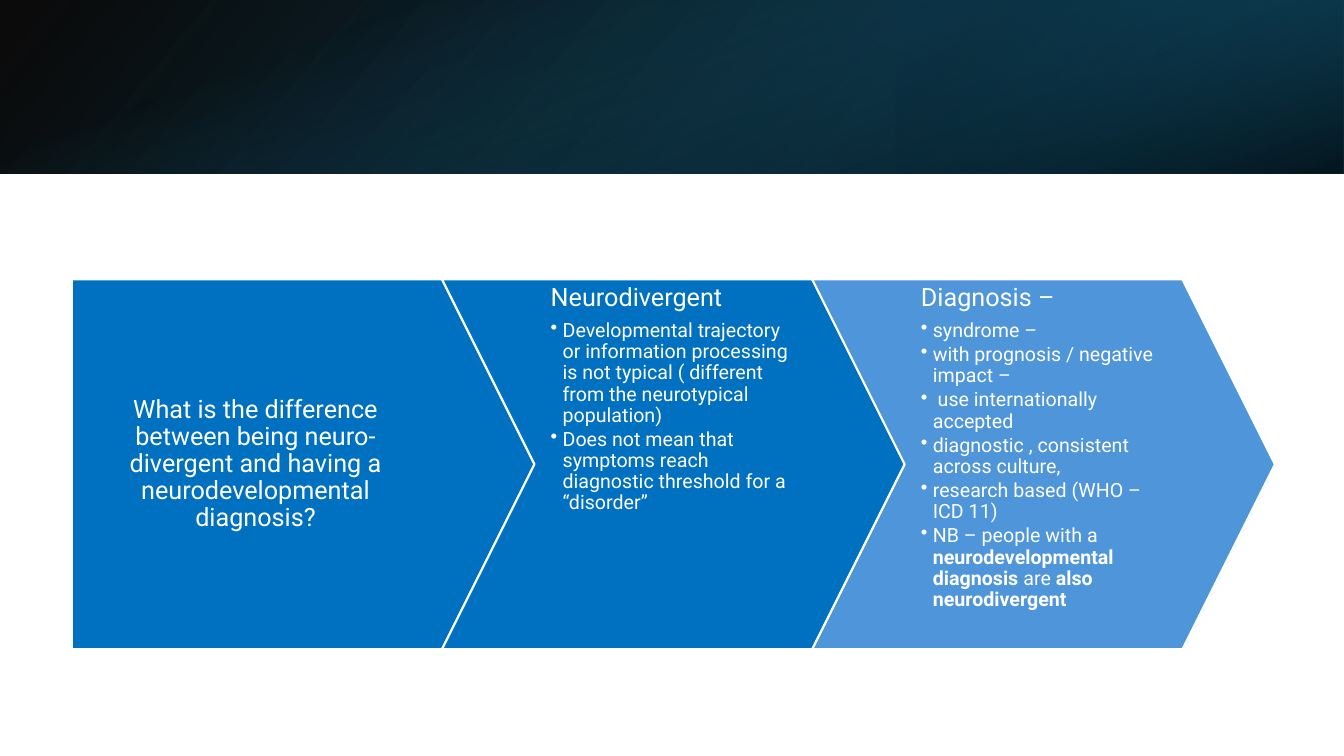
from dataclasses import dataclass

from lxml import etree
from pptx import Presentation
from pptx import util as u
from pptx.dml import color
from pptx.enum import shapes, text
from pptx.oxml import ns

SLIDE_W, SLIDE_H, BANNER_H = 33.87, 19.05, 4.37
STEP_LEFT, STEP_TOP, STEP_W, STEP_H = 1.81, 7.04, 11.66, 9.32
STEP_PITCH, POINT_DEPTH = 9.33, 2.33
SIDE_INSET, EDGE_INSET, BULLET_INDENT = 0.41, 0.13, 0.3
FONT, WHITE = "Roboto", "FFFFFF"


@dataclass
class Stop:
    position: float
    hex_color: str
    opacity: int


@dataclass
class Glow:
    left: float
    top: float
    width: float
    height: float
    rotation: int
    flipped: bool
    angle: int
    stops: tuple[Stop, Stop]


@dataclass
class Step:
    heading: str
    bullets: tuple[str, ...]
    fill: str
    preset: shapes.MSO_SHAPE = shapes.MSO_SHAPE.CHEVRON
    text_offset: float = POINT_DEPTH
    text_width: float = 7
    right_inset: float = SIDE_INSET
    anchor: text.MSO_ANCHOR = text.MSO_ANCHOR.TOP
    align: text.PP_ALIGN = text.PP_ALIGN.LEFT


GLOWS = (
    Glow(0, 0, SLIDE_W, BANNER_H, 0, True, 140,
         (Stop(0, "000000", 96), Stop(1, "104862", 100))),
    Glow(22.58, 0, 11.29, BANNER_H, 180, True, 320,
         (Stop(0.19, "0B3041", 68), Stop(1, "156082", 79))),
    Glow((SLIDE_W - BANNER_H) / 2, (BANNER_H - SLIDE_W) / 2, BANNER_H, SLIDE_W, 90, False, 340,
         (Stop(0.23, "156082", 0), Stop(0.99, "000000", 74))),
)

STEPS = (
    Step("What is the difference between being neuro-divergent and having a "
         "neurodevelopmental diagnosis?", (), "0070C0", shapes.MSO_SHAPE.PENTAGON,
         0, 10.5, 1.65, text.MSO_ANCHOR.MIDDLE, text.PP_ALIGN.CENTER),
    Step("Neurodivergent", (
        "Developmental trajectory or information processing is not typical "
        "( different from the neurotypical population)",
        "Does not mean that symptoms reach diagnostic threshold for a “disorder”",
    ), "0070C0"),
    Step("Diagnosis – ", (
        "syndrome –",
        "with prognosis / negative impact –",
        " use internationally accepted",
        "diagnostic , consistent across culture, ",
        "research based (WHO – ICD 11)",
        "NB – people with a *neurodevelopmental diagnosis *are *also neurodivergent*",
    ), "4E95D9"),
)


def rgb(hex_color: str) -> color.RGBColor:
    return color.RGBColor.from_string(hex_color)


def apply(target: object, values: dict[str, object]) -> None:
    for name, value in values.items():
        setattr(target, name, value)


def draw_glow(slide, glow: Glow) -> None:
    s = slide.shapes.add_shape(shapes.MSO_SHAPE.RECTANGLE, u.Cm(glow.left), u.Cm(glow.top),
                               u.Cm(glow.width), u.Cm(glow.height))
    s.shadow.inherit = False
    s.line.fill.background()
    s.rotation = glow.rotation
    if glow.flipped:
        s._element.spPr.find(ns.qn("a:xfrm")).set("flipH", "1")
    s.fill.gradient()
    s.fill.gradient_angle = 360 - glow.angle
    for gradient_stop, stop in zip(s.fill.gradient_stops, glow.stops):
        apply(gradient_stop, {"position": stop.position})
        gradient_stop.color.rgb = rgb(stop.hex_color)
    for tone, stop in zip(s._element.spPr.iter(ns.qn("a:srgbClr")), glow.stops):
        etree.SubElement(tone, ns.qn("a:alpha")).set("val", str(stop.opacity * 1000))


def write(p, content: str, size: int, space_after: float, align: text.PP_ALIGN) -> None:
    apply(p, {"line_spacing": 0.9, "space_after": u.Pt(space_after), "alignment": align})
    for i, part in enumerate(content.split("*")):
        if part:
            r = p.add_run()
            r.text = part
            apply(r.font, {"name": FONT, "size": u.Pt(size), "bold": i % 2 == 1})
            r.font.color.rgb = rgb(WHITE)


def add_bullet(p) -> None:
    indent = u.Cm(BULLET_INDENT)
    p_pr = p._p.get_or_add_pPr()
    p_pr.set("marL", str(indent))
    p_pr.set("indent", str(-indent))
    etree.SubElement(p_pr, ns.qn("a:buChar")).set("char", "•")


def draw_step(slide, step: Step, left: float) -> None:
    s = slide.shapes.add_shape(step.preset, u.Cm(left), u.Cm(STEP_TOP),
                               u.Cm(STEP_W), u.Cm(STEP_H))
    s.shadow.inherit = False
    s.adjustments[0] = 0.25
    s.fill.solid()
    s.fill.fore_color.rgb = rgb(step.fill)
    s.line.color.rgb = rgb(WHITE)
    s.line.width = u.Pt(1.5)

    tf = slide.shapes.add_textbox(u.Cm(left + step.text_offset), u.Cm(STEP_TOP),
                                  u.Cm(step.text_width), u.Cm(STEP_H)).text_frame
    apply(tf, {
        "word_wrap": True,
        "vertical_anchor": step.anchor,
        "margin_left": u.Cm(SIDE_INSET),
        "margin_right": u.Cm(step.right_inset),
        "margin_top": u.Cm(EDGE_INSET),
        "margin_bottom": u.Cm(EDGE_INSET),
    })
    write(tf.paragraphs[0], step.heading, 18, 6.3, step.align)
    for bullet in step.bullets:
        p = tf.add_paragraph()
        p.level = 1
        write(p, bullet, 14, 2.1, step.align)
        add_bullet(p)


def main() -> None:
    prs = Presentation()
    apply(prs, {"slide_width": u.Cm(SLIDE_W), "slide_height": u.Cm(SLIDE_H)})
    slide = prs.slides.add_slide(prs.slide_layouts[6])
    for glow in GLOWS:
        draw_glow(slide, glow)
    for i, step in enumerate(STEPS):
        draw_step(slide, step, STEP_LEFT + i * STEP_PITCH)
    prs.save("out.pptx")


if __name__ == "__main__":
    main()
